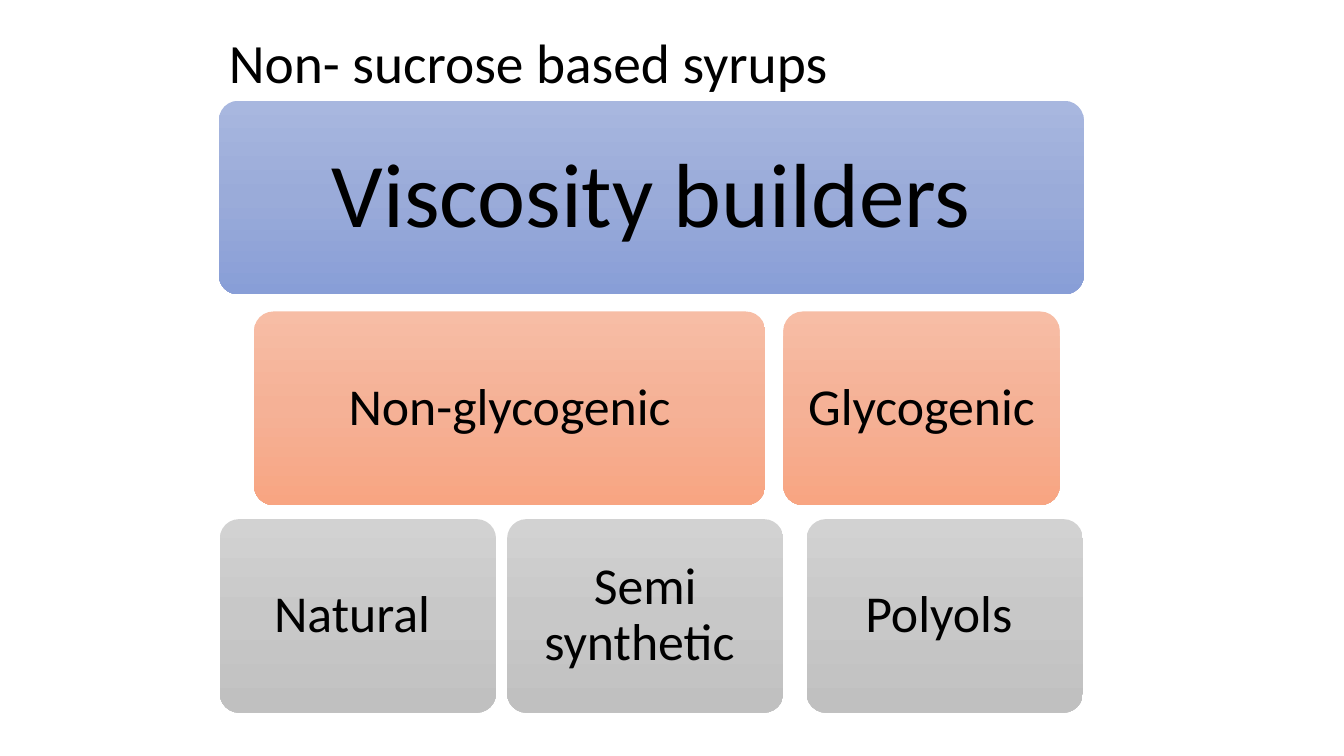
from copy import deepcopy
from dataclasses import dataclass
from pptx import Presentation
from pptx.dml.color import RGBColor
from pptx.enum.shapes import MSO_SHAPE
from pptx.enum.text import MSO_ANCHOR, MSO_AUTO_SIZE, PP_ALIGN
from pptx.oxml.ns import qn
from pptx.util import Inches, Pt

ROUND = MSO_SHAPE.ROUNDED_RECTANGLE
MIDDLE = MSO_ANCHOR.MIDDLE
FIXED = MSO_AUTO_SIZE.NONE
LEFT, CENTER = PP_ALIGN.LEFT, PP_ALIGN.CENTER


@dataclass(frozen=True)
class Theme:
    font: str = "Calibri"
    ink: str = "000000"
    title: float = 39.6
    large: float = 65
    label: float = 37
    blue: tuple = ("A8B7DF", "9AABD9", "889ED7")
    coral: tuple = ("F7BDA5", "F5B196", "F8A582")
    gray: tuple = ("D2D2D2", "C8C8C8", "C0C0C0")


THEME = Theme()


def write(frame, text, size, align):
    frame.word_wrap = True
    frame.auto_size = FIXED
    frame.vertical_anchor = MIDDLE
    para = frame.paragraphs[0]
    para.alignment = align
    para.line_spacing = 0.9
    run = para.add_run()
    run.text = text
    run.font.name = THEME.font
    run.font.size = Pt(size)
    run.font.color.rgb = RGBColor.from_string(THEME.ink)


def shade(shape, colors):
    fill = shape.fill
    fill.gradient()
    fill.gradient_angle = 270
    first = shape._element.spPr.find(qn("a:gradFill")).find(qn("a:gsLst"))[0]
    first.addnext(deepcopy(first))
    for stop, color, place in zip(fill.gradient_stops, colors, (0, 0.5, 1)):
        stop.color.rgb = RGBColor.from_string(color)
        stop.position = place


def add_title(slide, box, text):
    title = slide.shapes.title
    title.left, title.top, title.width, title.height = map(Inches, box)
    write(title.text_frame, text, THEME.title, LEFT)


def add_tier(slide, box, cards, colors, size, inset):
    left, top, height = box
    for shift, width, text in cards:
        card = slide.shapes.add_shape(
            ROUND, Inches(left + shift), Inches(top), Inches(width), Inches(height)
        )
        card.adjustments[0] = 0.1
        card.shadow.inherit = False
        card.line.fill.background()
        shade(card, colors)
        frame = card.text_frame
        frame.margin_left = frame.margin_right = Inches(inset)
        frame.margin_top = frame.margin_bottom = Inches(inset)
        write(frame, text, size, CENTER)


def main():
    deck = Presentation()
    deck.slide_width, deck.slide_height = Inches(13.33), Inches(7.5)
    slide = deck.slides.add_slide(deck.slide_layouts[5])
    left, height, narrow = 2.17, 1.92, 2.74
    add_title(slide, (left, 0.3, 8.17, 0.7), "Non- sucrose based syrups")
    tiers = (
        (1, [(0, 8.58, "Viscosity builders")], THEME.blue, THEME.large, 0.27),
        (3.09, [(0.35, 5.07, "Non-glycogenic"), (5.6, narrow, "Glycogenic")],
         THEME.coral, THEME.label, 0.15),
        (5.15, [(0.01, narrow, "Natural "), (2.86, narrow, "Semi synthetic "),
                (5.83, narrow, "Polyols ")],
         THEME.gray, THEME.label, 0.15),
    )
    for top, cards, colors, size, inset in tiers:
        add_tier(slide, (left, top, height), cards, colors, size, inset)
    deck.save("out.pptx")


if __name__ == "__main__":
    main()
